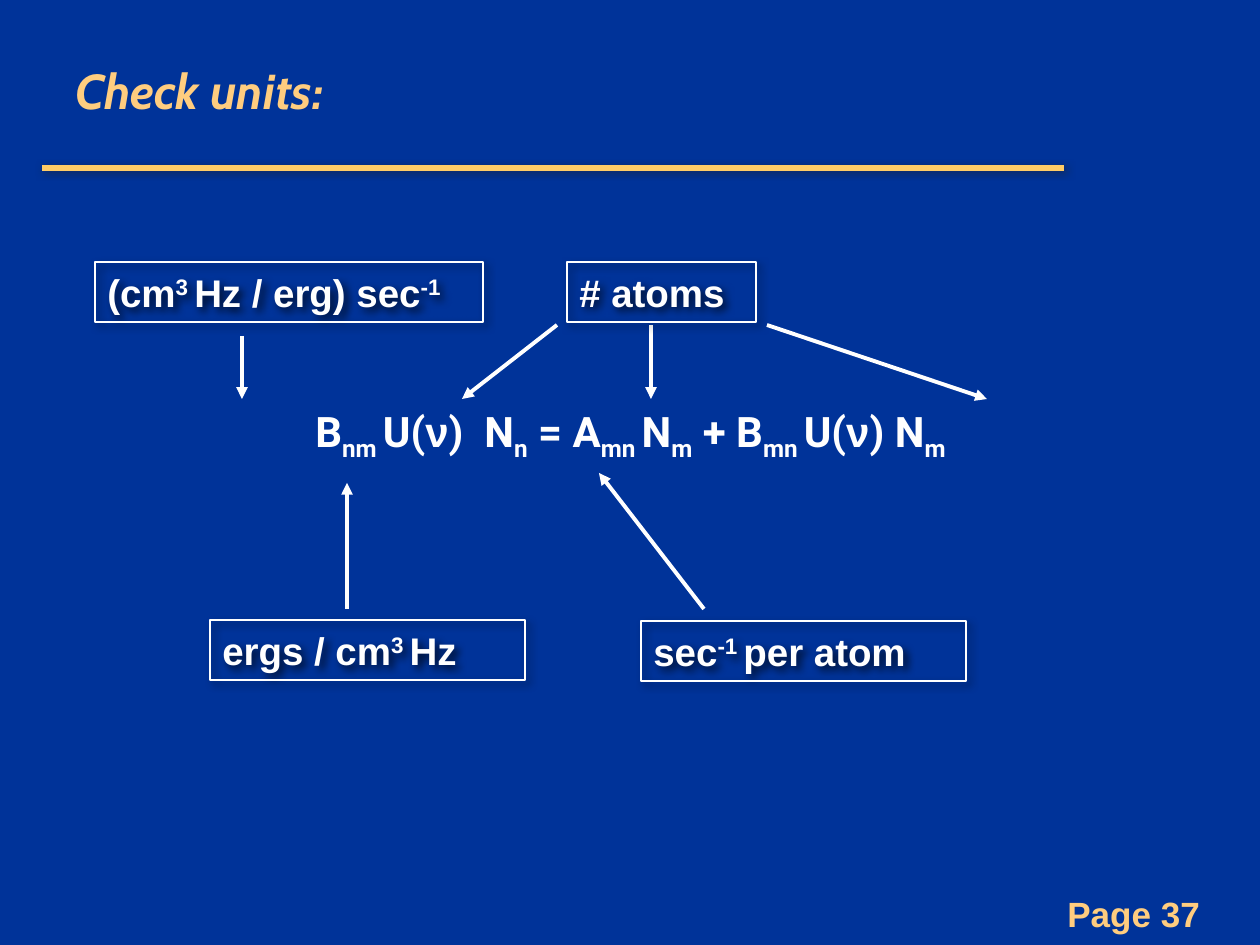
from lxml import etree
from pptx import Presentation
from pptx import util as u
from pptx.dml.color import RGBColor
from pptx.enum import shapes, text
from pptx.oxml import ns

EMU_PER_PX = 914400 / 126
COLORS = {"navy": "003399", "rule": "FFCC66", "gold": "FFCD7F",
          "white": "FFFFFF", "rule_shadow": "232323", "box_shadow": "000000"}


def px(*lengths):
    return [u.Emu(round(length * EMU_PER_PX)) for length in lengths]


def write(shape, runs, size, color, font_name, align=text.PP_ALIGN.LEFT, italic=None):
    frame = shape.text_frame
    frame.word_wrap = True
    paragraph = frame.paragraphs[0]
    paragraph.alignment = align
    font = paragraph.font
    font.name, font.size, font.bold, font.italic = font_name, u.Pt(size), True, italic
    font.color.rgb = RGBColor.from_string(COLORS[color])
    for content, baseline in runs:
        run = paragraph.add_run()
        run.text = content
        if content == "ν":
            run.font.name = "Arial"
        if baseline:
            run._r.get_or_add_rPr().set("baseline", str(baseline * 1000))
    return frame


presentation = Presentation()
presentation.slide_width, presentation.slide_height = px(1260, 945)
slide = presentation.slides.add_slide(presentation.slide_layouts[6])
slide.background.fill.solid()
slide.background.fill.fore_color.rgb = RGBColor.from_string(COLORS["navy"])

lines = [
    ("rule", 3, 42, 168, 1064, 168),
    ("white", 2.25, 347, 609, 347, 483),
    ("white", 2.25, 704, 609, 599, 473),
    ("white", 2.25, 651, 325, 651, 399),
    ("white", 2.25, 557, 325, 462, 399),
    ("white", 2.25, 767, 325, 987, 399),
    ("white", 2.25, 242, 336, 242, 399),
]
shadowed = []
for color, width, *ends in lines:
    connector = slide.shapes.add_connector(shapes.MSO_CONNECTOR.STRAIGHT, *px(*ends))
    connector.line.color.rgb = RGBColor.from_string(COLORS[color])
    connector.line.width = u.Pt(width)
    if color == "rule":
        shadowed.append((connector, "rule_shadow", 1.4))
    else:
        etree.SubElement(connector.line._get_or_add_ln(), ns.qn("a:tailEnd"), type="triangle")
        etree.SubElement(connector._element.spPr, ns.qn("a:effectLst"))

title = slide.shapes.add_textbox(*px(63, 0, 987, 179))
title_frame = write(title, [("Check units:", 0)], 28, "gold", "Cabin", italic=True)
title_frame.vertical_anchor = text.MSO_ANCHOR.MIDDLE

equation = slide.shapes.add_textbox(*px(53, 399, 1155, 116))
write(equation, [
    ("B", 0), ("nm ", -25), ("U(", 0), ("ν", 0), (")  N", 0), ("n", -25),
    (" = A", 0), ("mn ", -25), ("N", 0), ("m", -25), (" + B", 0),
    ("mn ", -25), ("U(", 0), ("ν", 0), (") N", 0), ("m", -25),
], 24, "white", "Roboto", text.PP_ALIGN.CENTER)

unit_boxes = [
    (210, 620, 315, [("ergs / cm", 0), ("3 ", 30), ("Hz", 0)]),
    (641, 621, 325, [("sec", 0), ("-1 ", 30), ("per atom", 0)]),
    (567, 262, 189, [("# atoms", 0)]),
    (95, 262, 388, [("(cm", 0), ("3 ", 30), ("Hz / erg) sec", 0), ("-1", 30)]),
]
for left, top, width, runs in unit_boxes:
    box = slide.shapes.add_shape(shapes.MSO_SHAPE.RECTANGLE, *px(left, top, width, 60))
    box.fill.background()
    box.line.color.rgb = RGBColor.from_string(COLORS["white"])
    box.line.width = u.Pt(0.75)
    write(box, runs, 22, "white", "Arial")
    shadowed.append((box, "box_shadow", 3))

for shape, color, distance in shadowed:
    effects = etree.SubElement(shape._element.spPr, ns.qn("a:effectLst"))
    shadow = etree.SubElement(effects, ns.qn("a:outerShdw"), blurRad=str(u.Pt(5)),
                              dist=str(u.Pt(distance)), dir="2700000", algn="ctr", rotWithShape="0")
    shadow_color = etree.SubElement(shadow, ns.qn("a:srgbClr"), val=COLORS[color])
    etree.SubElement(shadow_color, ns.qn("a:alpha"), val="75000")

page = slide.shapes.add_textbox(*px(910, 886, 326, 54))
page_frame = write(page, [("Page 37", 0)], 20, "gold", "Arial", text.PP_ALIGN.RIGHT)
page_frame.margin_right = px(36)[0]

presentation.save("out.pptx")
